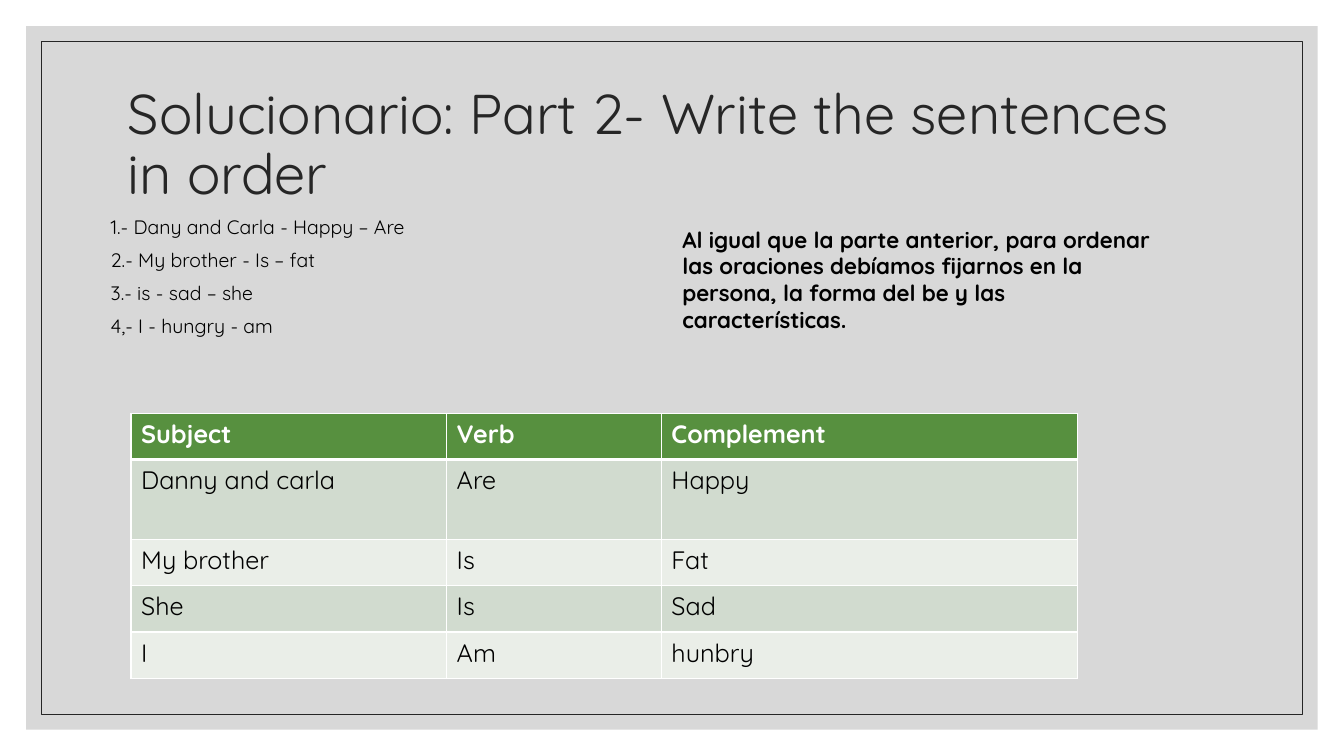
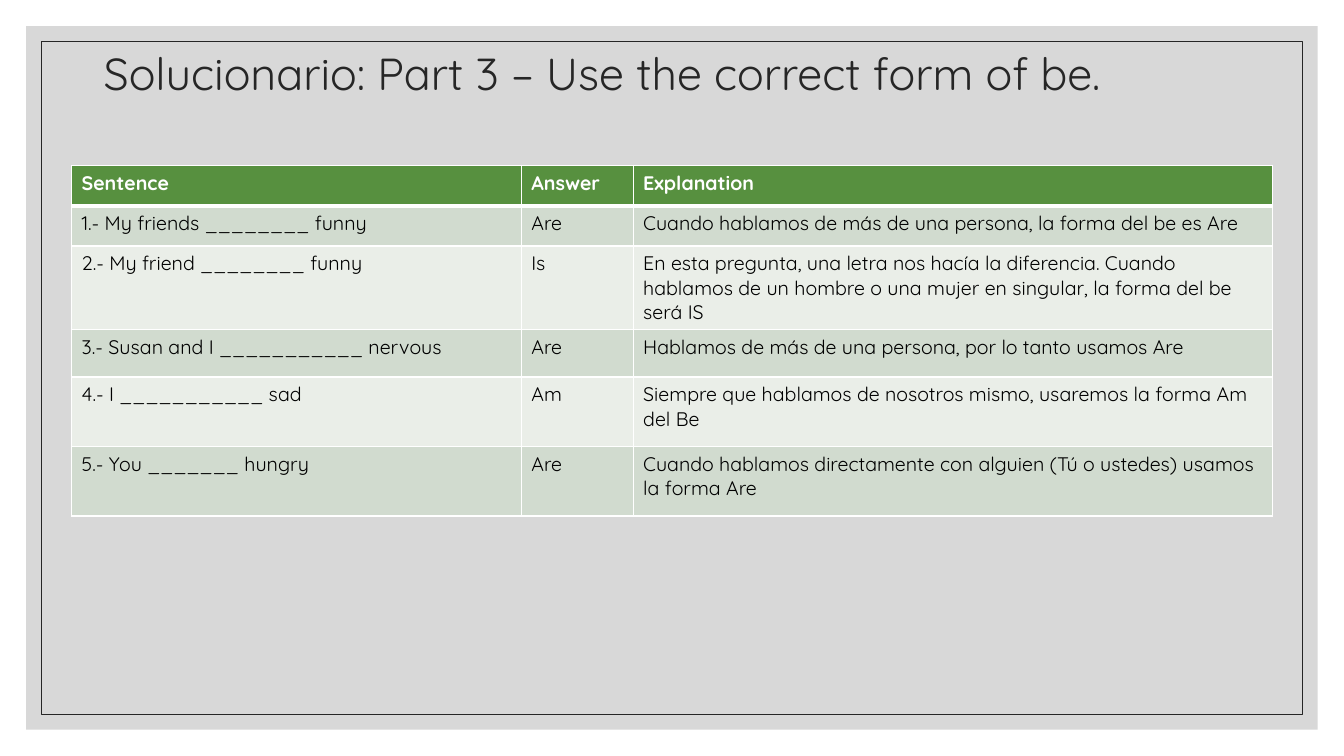
from dataclasses import dataclass

from lxml.etree import SubElement
from pptx import Presentation
from pptx.dml.color import RGBColor
from pptx.enum.shapes import MSO_SHAPE
from pptx.enum.text import MSO_ANCHOR
from pptx.oxml.ns import qn
from pptx.util import Inches, Pt


@dataclass(frozen=True)
class Theme:
    font: str = "Quicksand"
    panel: str = "BFBFBF"
    panel_opacity: int = 60
    dark: str = "262626"
    black: str = "000000"
    white: str = "FFFFFF"
    header: str = "57903F"
    bands: tuple = ("D1DBCF", "EAEEE8")
    title_large: float = 40
    title_small: float = 32
    note: float = 16
    body: float = 13.9
    table_large: float = 18
    table_small: float = 14
    frame_line: float = 0.5
    cell_line: float = 1
    header_line: float = 3


THEME = Theme()
SLIDE_SIZE = (13.33, 7.5)

ORDER_PROMPTS = [
    "1.- Dany and Carla - Happy – Are",
    "2.- My brother - Is – fat",
    "3.- is - sad – she",
    "4,- I - hungry - am",
]
ORDER_NOTE = (
    "Al igual que la parte anterior, para ordenar las oraciones debíamos "
    "fijarnos en la persona, la forma del be y las características."
)
ORDER_ROWS = [
    ("Subject", "Verb", "Complement"),
    ("Danny and carla", "Are", "Happy"),
    ("My brother", "Is", "Fat"),
    ("She", "Is", "Sad"),
    ("I", "Am", "hunbry"),
]
BE_ROWS = [
    ("Sentence", "Answer", "Explanation"),
    ("1.- My friends ________ funny", "Are",
     "Cuando hablamos de más de una persona, la forma del be es Are"),
    ("2.- My friend ________ funny", "Is",
     "En esta pregunta, una letra nos hacía la diferencia. Cuando hablamos "
     "de un hombre o una mujer en singular, la forma del be será IS"),
    ("3.- Susan and I ___________ nervous", "Are",
     "Hablamos de más de una persona, por lo tanto usamos Are"),
    ("4.- I ___________ sad", "Am",
     "Siempre que hablamos de nosotros mismo, usaremos la forma Am del Be"),
    ("5.- You _______ hungry", "Are",
     "Cuando hablamos directamente con alguien (Tú o ustedes) usamos la forma Are"),
]


def inches(*lengths):
    return [Inches(length) for length in lengths]


def write_text(frame, lines, *, size, color=THEME.black, bold=False,
               line_spacing=None, space_before=None):
    frame.word_wrap = True
    for index, line in enumerate(lines):
        paragraph = frame.paragraphs[0] if index == 0 else frame.add_paragraph()
        if line_spacing is not None:
            paragraph.line_spacing = line_spacing
        if space_before is not None:
            paragraph.space_before = Pt(space_before)
        run = paragraph.add_run()
        run.text = line
        run.font.name = THEME.font
        run.font.size = Pt(size)
        run.font.bold = bold
        run.font.color.rgb = RGBColor.from_string(color)


def add_text(slide, box, lines, *, anchor=MSO_ANCHOR.TOP, **text_format):
    frame = slide.shapes.add_textbox(*inches(*box)).text_frame
    frame.vertical_anchor = anchor
    write_text(frame, lines, **text_format)


def add_title(slide, box, text, size):
    add_text(slide, box, [text], anchor=MSO_ANCHOR.MIDDLE, size=size,
             color=THEME.dark, line_spacing=0.9)


def add_centered_rectangle(slide, margin):
    width, height = SLIDE_SIZE
    box = (margin, margin, width - 2 * margin, height - 2 * margin)
    shape = slide.shapes.add_shape(MSO_SHAPE.RECTANGLE, *inches(*box))
    shape.shadow.inherit = False
    return shape


def add_background(slide):
    panel = add_centered_rectangle(slide, 0.26)
    panel.fill.solid()
    panel.fill.fore_color.rgb = RGBColor.from_string(THEME.panel)
    panel.line.fill.background()
    color = panel._element.spPr.find(qn("a:solidFill")).find(qn("a:srgbClr"))
    SubElement(color, qn("a:alpha"), val=str(THEME.panel_opacity * 1000))

    border = add_centered_rectangle(slide, 0.41)
    border.fill.background()
    border.line.color.rgb = RGBColor.from_string(THEME.dark)
    border.line.width = Pt(THEME.frame_line)


def set_borders(cell, top, bottom):
    properties = cell._tc.get_or_add_tcPr()
    widths = {"a:lnL": THEME.cell_line, "a:lnR": THEME.cell_line,
              "a:lnT": top, "a:lnB": bottom}
    for tag, width in widths.items():
        line = SubElement(properties, qn(tag), w=str(Pt(width)))
        fill = SubElement(line, qn("a:solidFill"))
        SubElement(fill, qn("a:srgbClr"), val=THEME.white)


def add_table(slide, origin, column_widths, row_heights, rows, size):
    box = (*origin, sum(column_widths), sum(row_heights))
    table = slide.shapes.add_table(
        len(rows), len(column_widths), *inches(*box)).table
    table.horz_banding = False
    for column, width in zip(table.columns, column_widths):
        column.width = Inches(width)
    for row_index, texts in enumerate(rows):
        is_header = row_index == 0
        table.rows[row_index].height = Inches(row_heights[row_index])
        fill = THEME.header if is_header else THEME.bands[(row_index - 1) % 2]
        top = THEME.header_line if row_index == 1 else THEME.cell_line
        bottom = THEME.header_line if is_header else THEME.cell_line
        for column_index, text in enumerate(texts):
            cell = table.cell(row_index, column_index)
            set_borders(cell, top, bottom)
            cell.fill.solid()
            cell.fill.fore_color.rgb = RGBColor.from_string(fill)
            write_text(cell.text_frame, [text], size=size, bold=is_header,
                       color=THEME.white if is_header else THEME.black)


def add_slide(presentation):
    slide = presentation.slides.add_slide(presentation.slide_layouts[6])
    add_background(slide)
    return slide


def build_order_slide(presentation):
    slide = add_slide(presentation)
    add_title(slide, (1.17, 0.7, 11, 1.5),
              "Solucionario: Part 2- Write the sentences in order",
              THEME.title_large)
    add_text(slide, (1, 2.11, 4.76, 1.62), ORDER_PROMPTS, size=THEME.body,
             line_spacing=0.9, space_before=8.5)
    add_table(slide, (1.3, 4.1), [3.13, 2.13, 4.13],
              [0.46, 0.79, 0.46, 0.46, 0.46], ORDER_ROWS, THEME.table_large)
    add_text(slide, (6.67, 2.19, 4.9, 1.18), [ORDER_NOTE], size=THEME.note,
             bold=True)


def build_be_slide(presentation):
    slide = add_slide(presentation)
    add_title(slide, (0.93, 0, 11.43, 1.5),
              "Solucionario: Part 3 – Use the correct form of be.",
              THEME.title_small)
    add_table(slide, (0.71, 1.64), [4.46, 1.11, 6.34],
              [0.4, 0.4, 0.83, 0.47, 0.69, 0.69], BE_ROWS, THEME.table_small)


def main():
    presentation = Presentation()
    presentation.slide_width, presentation.slide_height = inches(*SLIDE_SIZE)
    build_order_slide(presentation)
    build_be_slide(presentation)
    presentation.save("out.pptx")


if __name__ == "__main__":
    main()
